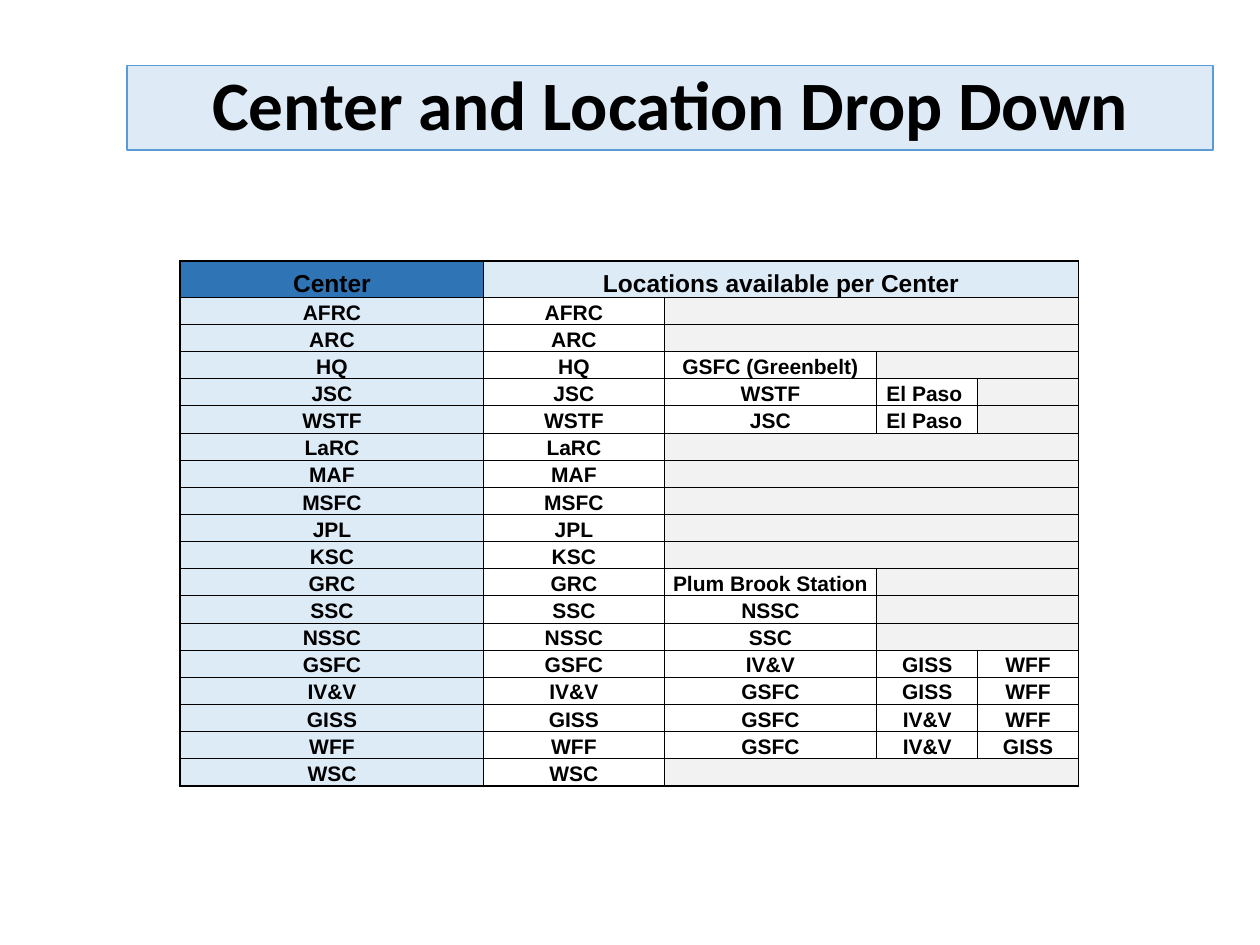
from dataclasses import dataclass

from lxml import etree
from pptx import Presentation
from pptx.dml.color import RGBColor
from pptx.enum import text
from pptx.oxml import ns
from pptx.util import Inches, Pt


@dataclass(frozen=True)
class Theme:
    ink: str = "000000"
    banner: str = "DEEBF7"
    banner_edge: str = "5B9BD5"
    center_header: str = "2F75B5"
    center: str = "DDEBF7"
    location: str = "FFFFFF"
    unused: str = "F2F2F2"
    title_font: str = "Calibri"
    table_font: str = "Arial"
    title_size: float = 39.6
    header_size: float = 14
    body_size: float = 12
    outer_line: float = 1
    inner_line: float = 0.5


@dataclass(frozen=True)
class Edges:
    left: float
    right: float
    top: float
    bottom: float


THEME = Theme()
HEADERS = (" Center ", "Locations available per Center")
LOCATIONS = (
    ("AFRC",),
    ("ARC",),
    ("HQ", "GSFC (Greenbelt)"),
    ("JSC", "WSTF", "El Paso "),
    ("WSTF", "JSC", "El Paso "),
    ("LaRC",),
    ("MAF",),
    ("MSFC",),
    ("JPL",),
    ("KSC",),
    ("GRC", "Plum Brook Station"),
    ("SSC", "NSSC"),
    ("NSSC", "SSC"),
    ("GSFC", "IV&V", "GISS", "WFF"),
    ("IV&V", "GSFC", "GISS", "WFF"),
    ("GISS", "GSFC", "IV&V", "WFF"),
    ("WFF", "GSFC", "IV&V", "GISS"),
    ("WSC",),
)
COLUMN_WIDTHS = (2.41, 1.43, 1.69, 0.8, 0.8)
TABLE_HEIGHT = 4.17
HEADER_HEIGHT = 0.29


def paint(fill, color: str) -> None:
    fill.solid()
    fill.fore_color.rgb = RGBColor.from_string(color)


def write(frame, words: str, *, font: str, size: float, spacing: float = 1.0) -> None:
    paragraph = frame.paragraphs[0]
    paragraph.alignment = text.PP_ALIGN.CENTER
    paragraph.line_spacing = spacing
    if not words:
        end = etree.SubElement(paragraph._p, ns.qn("a:endParaRPr"))
        end.set("sz", str(int(size * 100)))
        return
    run = paragraph.add_run()
    run.text = words
    run.font.name = font
    run.font.size = Pt(size)
    run.font.bold = True
    run.font.color.rgb = RGBColor.from_string(THEME.ink)


def draw_edges(cell, edges: Edges) -> None:
    properties = cell._tc.get_or_add_tcPr()
    sides = (("L", edges.left), ("R", edges.right), ("T", edges.top), ("B", edges.bottom))
    for position, (side, width) in enumerate(sides):
        line = etree.Element(ns.qn(f"a:ln{side}"), w=str(Pt(width)))
        if width:
            solid = etree.SubElement(line, ns.qn("a:solidFill"))
            etree.SubElement(solid, ns.qn("a:srgbClr"), val=THEME.ink)
        else:
            etree.SubElement(line, ns.qn("a:noFill"))
        properties.insert(position, line)


def draw_cell(cell, words: str, color: str, size: float, edges: Edges) -> None:
    cell.margin_left = cell.margin_right = cell.margin_top = Inches(0.01)
    cell.margin_bottom = 0
    cell.vertical_anchor = text.MSO_ANCHOR.BOTTOM
    paint(cell.fill, color)
    write(cell.text_frame, words, font=THEME.table_font, size=size)
    draw_edges(cell, edges)


def draw_title(title) -> None:
    title.left, title.top = Inches(1.01), Inches(0.52)
    title.width, title.height = Inches(8.62), Inches(0.67)
    paint(title.fill, THEME.banner)
    title.line.color.rgb = RGBColor.from_string(THEME.banner_edge)
    title.line.width = Pt(1)
    frame = title.text_frame
    frame.auto_size = text.MSO_AUTO_SIZE.NONE
    frame.vertical_anchor = text.MSO_ANCHOR.MIDDLE
    write(frame, "Center and Location Drop Down", font=THEME.title_font,
          size=THEME.title_size, spacing=0.9)


def draw_locations(slide) -> None:
    row_count, column_count = len(LOCATIONS) + 1, len(COLUMN_WIDTHS)
    table = slide.shapes.add_table(
        row_count, column_count, Inches(1.43), Inches(2.07),
        Inches(sum(COLUMN_WIDTHS)), Inches(TABLE_HEIGHT)).table
    table.first_row = table.horz_banding = False
    for column, width in zip(table.columns, COLUMN_WIDTHS):
        column.width = Inches(width)
    body_height = (TABLE_HEIGHT - HEADER_HEIGHT) / len(LOCATIONS)
    for index, row in enumerate(table.rows):
        row.height = Inches(body_height if index else HEADER_HEIGHT)

    outer, inner = THEME.outer_line, THEME.inner_line
    table.cell(0, 1).merge(table.cell(0, column_count - 1))
    for column in range(column_count):
        words = HEADERS[column] if column < len(HEADERS) else ""
        color = THEME.center if column else THEME.center_header
        edges = Edges(inner if column else outer, inner if column == 0 else outer, outer, inner)
        draw_cell(table.cell(0, column), words, color, THEME.header_size, edges)

    for row, locations in enumerate(LOCATIONS, start=1):
        entries = (locations[0], *locations)
        used = len(entries)
        bottom = outer if row == row_count - 1 else inner
        for column in range(column_count):
            filled = column < used
            words = entries[column] if filled else ""
            color = THEME.center if column == 0 else THEME.location if filled else THEME.unused
            left = outer if column == 0 else inner if column <= used else 0
            last = column == column_count - 1
            right = outer if last else inner if filled else 0
            draw_cell(table.cell(row, column), words, color, THEME.body_size,
                      Edges(left, right, inner, bottom))


def main() -> None:
    deck = Presentation()
    deck.slide_width, deck.slide_height = Inches(10), Inches(7.5)
    slide = deck.slides.add_slide(deck.slide_layouts[5])
    draw_title(slide.shapes.title)
    draw_locations(slide)
    deck.save("out.pptx")


if __name__ == "__main__":
    main()
